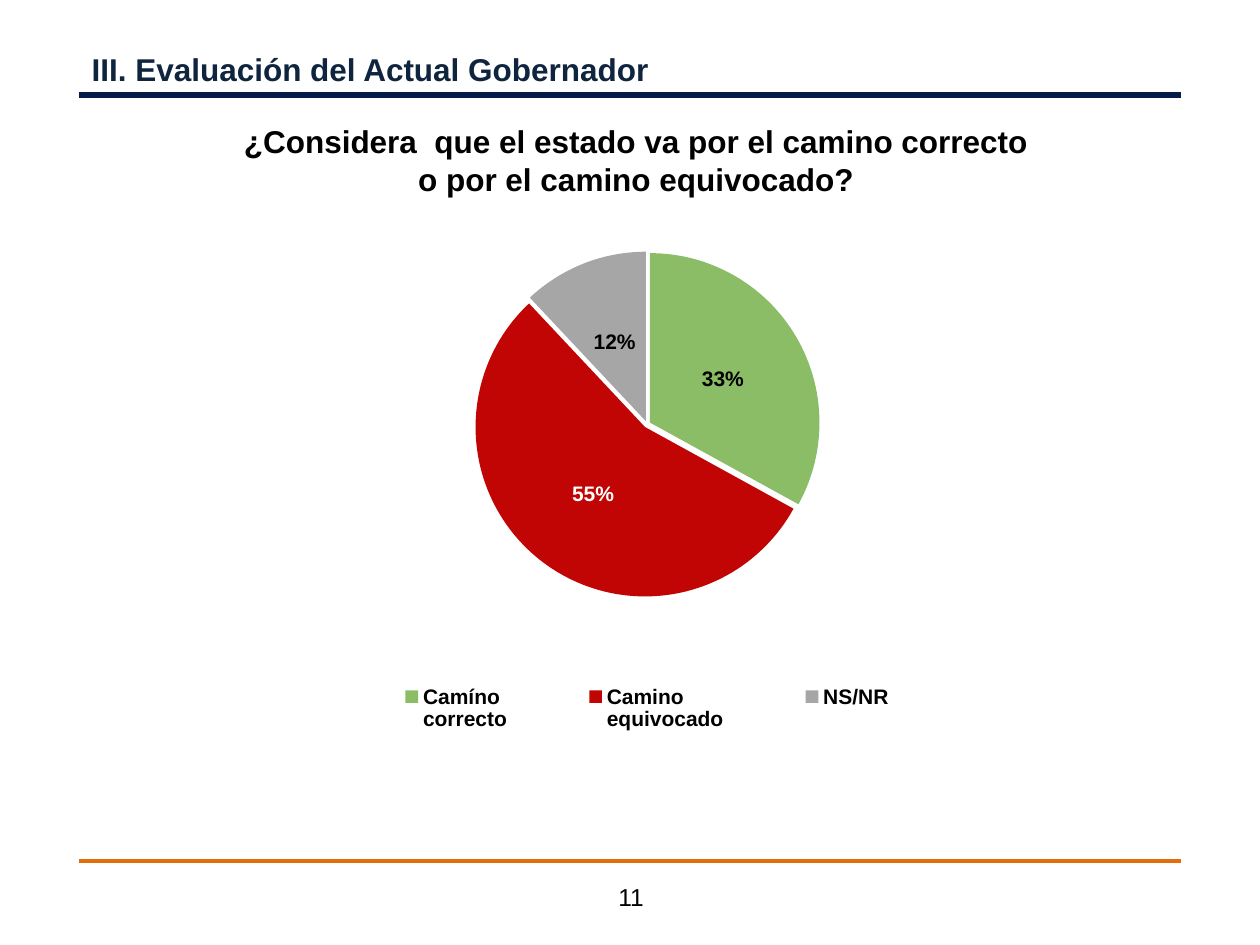
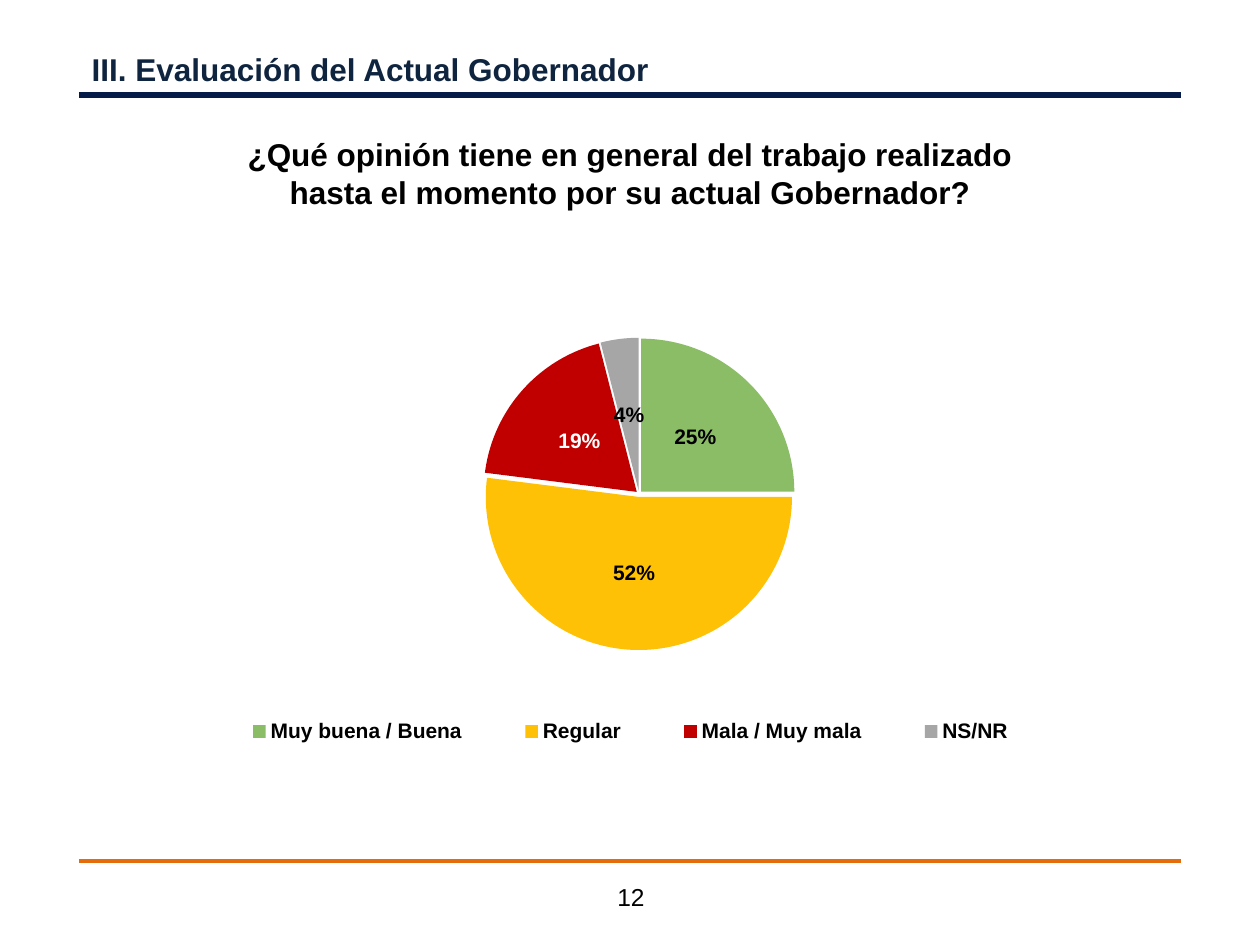
"""Build two survey slides, each with a question and a pie chart of its answers."""
from dataclasses import dataclass

from lxml import etree
from pptx import Presentation
from pptx.chart.chart import Chart
from pptx.chart.data import CategoryChartData
from pptx.dml.color import RGBColor
from pptx.enum.chart import XL_CHART_TYPE, XL_LABEL_POSITION, XL_LEGEND_POSITION
from pptx.enum.shapes import MSO_CONNECTOR
from pptx.enum.text import MSO_ANCHOR, PP_ALIGN
from pptx.oxml.ns import qn
from pptx.slide import Slide
from pptx.text.text import Font, TextFrame
from pptx.util import Emu, Pt

PIE = XL_CHART_TYPE.PIE
LABEL_CENTER = XL_LABEL_POSITION.CENTER
LEGEND_BOTTOM = XL_LEGEND_POSITION.BOTTOM
STRAIGHT = MSO_CONNECTOR.STRAIGHT
TOP = MSO_ANCHOR.TOP
LEFT, CENTER = PP_ALIGN.LEFT, PP_ALIGN.CENTER

PX_PER_INCH = 126
FONT_NAME = "Arial"
BLACK, WHITE = "000000", "FFFFFF"
NAVY, TITLE_BLUE, ORANGE = "061C48", "0F243E", "E46C0A"
GREEN, RED, YELLOW, GREY = "88BA62", "C00000", "FFC000", "A6A6A6"
SECTION_TITLE = "III. Evaluación del Actual Gobernador"
EXPLOSION = 2


@dataclass(frozen=True)
class Area:
    left: float
    top: float
    width: float
    height: float

    def emu(self) -> tuple[Emu, Emu, Emu, Emu]:
        return px(self.left), px(self.top), px(self.width), px(self.height)


@dataclass(frozen=True)
class Answer:
    name: str
    share: float
    color: str
    opacity: int = 100
    label_color: str = BLACK


@dataclass(frozen=True)
class Rule:
    y: int
    color: str
    weight: float


@dataclass(frozen=True)
class Question:
    number: int
    lines: tuple[str, ...]
    text_area: Area
    chart_area: Area
    plot: Area
    legend: Area
    answers: tuple[Answer, ...]


TITLE_AREA = Area(79, 44, 1157, 50)
NUMBER_AREA = Area(547, 876, 168, 43)
RULE_LEFT, RULE_RIGHT = 79, 1181
RULES = (Rule(95, NAVY, 3), Rule(861, ORANGE, 2.25))

QUESTIONS = (
    Question(
        11,
        ("¿Considera  que el estado va por el camino correcto", "o por el camino equivocado?"),
        Area(79, 116, 1114, 89),
        Area(297, 234, 667, 586),
        Area(0.22, 0.03, 0.61, 0.59),
        Area(0.05, 0.76, 0.95, 0.1),
        (
            Answer("Camíno \ncorrecto", 0.33, GREEN, 97),
            Answer("Camino \nequivocado", 0.55, RED, 98, WHITE),
            Answer("NS/NR", 0.12, GREY),
        ),
    ),
    Question(
        12,
        ("¿Qué opinión tiene en general del trabajo realizado",
         "hasta el momento por su actual Gobernador?"),
        Area(54, 129, 1152, 89),
        Area(197, 236, 867, 679),
        Area(0.27, 0.15, 0.48, 0.46),
        Area(0, 0.69, 1, 0.08),
        (
            Answer("Muy buena / Buena", 0.25, GREEN, 97),
            Answer("Regular", 0.52, YELLOW, 98),
            Answer("Mala / Muy mala", 0.19, RED, label_color=WHITE),
            Answer("NS/NR", 0.04, GREY),
        ),
    ),
)


def px(length: float) -> Emu:
    """Turn pixels into EMU."""
    return Emu(round(length * 914400 / PX_PER_INCH))


def rgb(color: str) -> RGBColor:
    """Turn a hex string into a colour."""
    return RGBColor.from_string(color)


def style_font(font: Font, size: int, color: str, bold: bool) -> None:
    """Give a font the deck's typeface with a size, colour and weight."""
    font.name, font.size, font.bold = FONT_NAME, Pt(size), bold
    font.color.rgb = rgb(color)


def write_lines(frame: TextFrame, lines: tuple[str, ...], size: int, color: str,
                bold: bool, align: PP_ALIGN) -> None:
    """Fill a text frame with one paragraph per line."""
    frame.word_wrap = True
    frame.vertical_anchor = TOP
    frame.text = "\n".join(lines)
    for para in frame.paragraphs:
        para.alignment = align
        style_font(para.font, size, color, bold)


def add_text(page: Slide, area: Area, lines: tuple[str, ...], size: int, bold: bool) -> None:
    """Add a centred black text box."""
    box = page.shapes.add_textbox(*area.emu())
    write_lines(box.text_frame, lines, size, BLACK, bold, CENTER)


def add_rule(page: Slide, rule: Rule) -> None:
    """Draw a horizontal rule across the page."""
    line = page.shapes.add_connector(
        STRAIGHT, px(RULE_LEFT), px(rule.y), px(RULE_RIGHT), px(rule.y))
    line.line.color.rgb = rgb(rule.color)
    line.line.width = Pt(rule.weight)
    etree.SubElement(line._element.spPr, qn("a:effectLst"))


def add_frame(page: Slide, number: int) -> None:
    """Add the section title, the rules and the page number."""
    title = page.shapes.title
    title.left, title.top, title.width, title.height = TITLE_AREA.emu()
    write_lines(title.text_frame, (SECTION_TITLE,), 18, TITLE_BLUE, True, LEFT)
    for rule in RULES:
        add_rule(page, rule)
    add_text(page, NUMBER_AREA, (str(number),), 14, False)


def place_part(part: etree._Element, position: int, area: Area, inner: bool = False) -> None:
    """Give a chart part a manual layout in fractions of the chart."""
    for old in part.findall(qn("c:layout")):
        part.remove(old)
    layout = etree.Element(qn("c:layout"))
    manual = etree.SubElement(layout, qn("c:manualLayout"))
    settings = [("layoutTarget", "inner")] if inner else []
    settings += [("xMode", "edge"), ("yMode", "edge"), ("x", area.left), ("y", area.top),
                 ("w", area.width), ("h", area.height)]
    for tag, value in settings:
        etree.SubElement(manual, qn(f"c:{tag}")).set("val", str(value))
    part.insert(position, layout)


def style_slices(chart: Chart, answers: tuple[Answer, ...]) -> None:
    """Pull the slices apart, then colour and label each one."""
    series = chart.plots[0].series[0]
    explosion = etree.Element(qn("c:explosion"))
    explosion.set("val", str(EXPLOSION))
    series._element.find(qn("c:tx")).addnext(explosion)
    for index, answer in enumerate(answers):
        fill = series.points[index].format.fill
        fill.solid()
        fill.fore_color.rgb = rgb(answer.color)
    for answer, color in zip(answers, series._element.findall(".//" + qn("a:srgbClr"))):
        if answer.opacity < 100:
            etree.SubElement(color, qn("a:alpha")).set("val", str(answer.opacity * 1000))
    labels = series.data_labels
    labels.show_value = True
    labels.number_format, labels.number_format_is_linked = "0%", False
    labels.position = LABEL_CENTER
    style_font(labels.font, 12, BLACK, True)
    for index, answer in enumerate(answers):
        if answer.label_color != BLACK:
            label = series.points[index].data_label
            style_font(label.font, 12, answer.label_color, True)
            label.position = LABEL_CENTER


def add_pie(page: Slide, question: Question) -> None:
    """Add the pie chart of a question's answers."""
    data = CategoryChartData(number_format="0%")
    data.categories = [answer.name for answer in question.answers]
    data.add_series("Series 1", [answer.share for answer in question.answers])
    chart = page.shapes.add_chart(PIE, *question.chart_area.emu(), data).chart
    chart.has_title = False
    style_font(chart.font, 12, BLACK, True)
    chart.has_legend = True
    chart.legend.position = LEGEND_BOTTOM
    chart.legend.include_in_layout = False
    chart.plots[0].vary_by_categories = True
    style_slices(chart, question.answers)
    place_part(chart._chartSpace.find(".//" + qn("c:plotArea")), 0, question.plot, inner=True)
    place_part(chart.legend._element, 1, question.legend)


def main() -> None:
    """Build and save the deck."""
    deck = Presentation()
    deck.slide_width, deck.slide_height = px(1260), px(945)
    title_only = deck.slide_layouts[5]
    for question in QUESTIONS:
        page = deck.slides.add_slide(title_only)
        add_frame(page, question.number)
        add_text(page, question.text_area, question.lines, 18, True)
        add_pie(page, question)
    deck.save("out.pptx")


if __name__ == "__main__":
    main()
